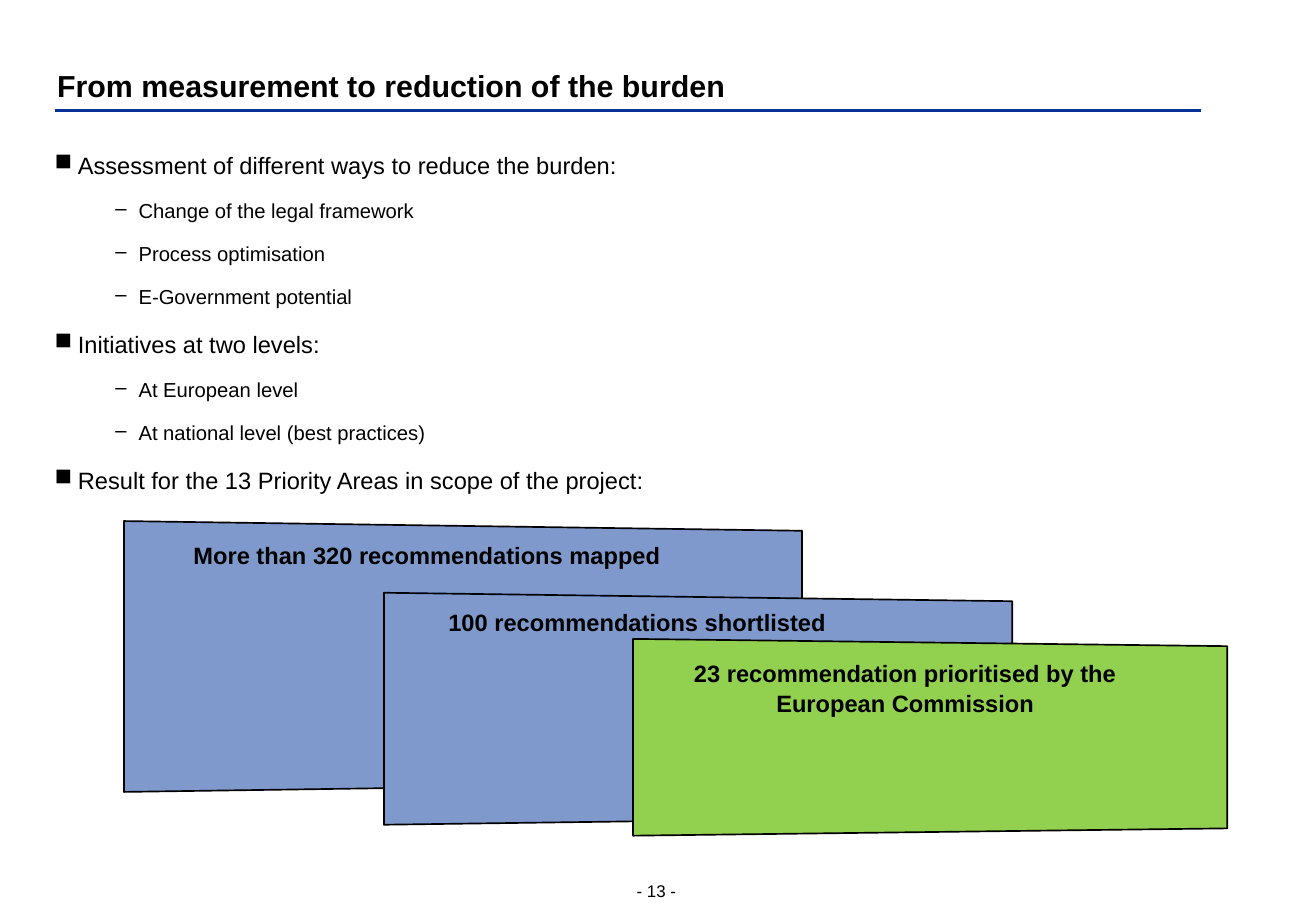
import pptx
import pptx.util
import pptx.dml.color
import pptx.enum.shapes
import pptx.enum.text
import pptx.oxml
import pptx.oxml.ns
from pptx.util import Inches

COLORS = {"text": "000000", "rule": "003399", "blue": "8099CC", "green": "92D050"}
ALIGN = pptx.enum.text.PP_ALIGN
ANCHOR = pptx.enum.text.MSO_ANCHOR


def color(name):
    return pptx.dml.color.RGBColor.from_string(COLORS[name])


def write_text(paragraph, text, size=14, bold=False, align=ALIGN.LEFT, spacing=1.06, before=0):
    paragraph.text = text
    paragraph.alignment = align
    paragraph.line_spacing = spacing
    paragraph.space_before = pptx.util.Pt(before)
    font = paragraph.font
    font.name = "Arial"
    font.size = pptx.util.Pt(size)
    font.bold = bold
    font.color.rgb = color("text")


class SlideBuilder:
    levels = [("■", 0.19, 14, 11.7), ("–", 0.69, 12, 10.3)]
    hanging = 0.19

    def __init__(self, slide):
        self.slide = slide

    def set_frame(self, shape, anchor=ANCHOR.TOP, wrap=True, left=0, top=0, right=0):
        frame = shape.text_frame
        frame.word_wrap = wrap
        frame.vertical_anchor = anchor
        frame.margin_left, frame.margin_top = Inches(left), Inches(top)
        frame.margin_right, frame.margin_bottom = Inches(right), Inches(0)
        return frame

    def text_box(self, left, top, width, height, **frame_format):
        shape = self.slide.shapes.add_textbox(
            Inches(left), Inches(top), Inches(width), Inches(height))
        return self.set_frame(shape, **frame_format)

    def label(self, box, text, anchor=ANCHOR.TOP, wrap=True, **text_format):
        frame = self.text_box(*box, anchor=anchor, wrap=wrap)
        write_text(frame.paragraphs[0], text, **text_format)

    def rule(self, left, right, top):
        connector = self.slide.shapes.add_connector(
            pptx.enum.shapes.MSO_CONNECTOR.STRAIGHT,
            Inches(left), Inches(top), Inches(right), Inches(top))
        connector.line.color.rgb = color("rule")
        connector.line.width = pptx.util.Pt(1.5)
        properties = connector._element.spPr
        properties.append(pptx.oxml.parse_xml(
            f"<a:effectLst {pptx.oxml.ns.nsdecls('a')}/>"))

    def bullets(self, box, items):
        frame = self.text_box(*box)
        for index, (level, text) in enumerate(items):
            paragraph = frame.add_paragraph() if index else frame.paragraphs[0]
            symbol, indent, size, before = self.levels[level]
            paragraph.level = level
            properties = paragraph._p.get_or_add_pPr()
            properties.set("marL", str(Inches(indent)))
            properties.set("indent", str(-Inches(self.hanging)))
            properties.append(pptx.oxml.parse_xml(
                f'<a:buChar {pptx.oxml.ns.nsdecls("a")} char="{symbol}"/>'))
            write_text(paragraph, text, size=size, before=before if index else 0)

    def panel(self, box, taper, fill, text, margins):
        left, top, right, bottom = box
        builder = self.slide.shapes.build_freeform(
            Inches(left), Inches(top), scale=1.0)
        corners = [(right, top + taper), (right, bottom - taper), (left, bottom)]
        builder.add_line_segments(
            [(Inches(x), Inches(y)) for x, y in corners], close=True)
        shape = builder.convert_to_shape()
        shape.shadow.inherit = False
        shape.fill.solid()
        shape.fill.fore_color.rgb = color(fill)
        shape.line.color.rgb = color("text")
        shape.line.width = pptx.util.Pt(1)
        margin_left, margin_top, margin_right = margins
        frame = self.set_frame(
            shape, left=margin_left, top=margin_top, right=margin_right)
        write_text(frame.paragraphs[0], text, bold=True, align=ALIGN.CENTER)


def main():
    presentation = pptx.Presentation()
    presentation.slide_width = Inches(10.83)
    presentation.slide_height = Inches(7.5)
    slide = presentation.slides.add_slide(presentation.slide_layouts[6])
    builder = SlideBuilder(slide)

    builder.rule(0.45, 9.88, 0.91)
    builder.label((0.47, 0.55, 9.91, 0.3), "From measurement to reduction of the burden",
                  anchor=ANCHOR.BOTTOM, size=18, bold=True)
    builder.label((5.24, 7.25, 0.34, 0.17), "- 13 -", wrap=False, size=10, spacing=1.0)
    builder.bullets((0.45, 1.23, 9.92, 2.9), [
        (0, "Assessment of different ways to reduce the burden:"),
        (1, "Change of the legal framework"),
        (1, "Process optimisation"),
        (1, "E-Government potential"),
        (0, "Initiatives at two levels:"),
        (1, "At European level"),
        (1, "At national level (best practices)"),
        (0, "Result for the 13 Priority Areas in scope of the project:"),
    ])

    panels = [
        ((1.02, 4.29, 6.6, 6.52), 0.08, "blue",
         "More than 320 recommendations mapped", (0, 0.15, 0.59)),
        ((3.16, 4.88, 8.33, 6.79), 0.07, "blue",
         "100 recommendations shortlisted", (0, 0.11, 1)),
        ((5.21, 5.26, 10.1, 6.88), 0.06, "green",
         "23 recommendation prioritised by the European Commission", (0.3, 0.15, 0.71)),
    ]
    for box, taper, fill, text, margins in panels:
        builder.panel(box, taper, fill, text, margins)

    presentation.save("out.pptx")


if __name__ == "__main__":
    main()
